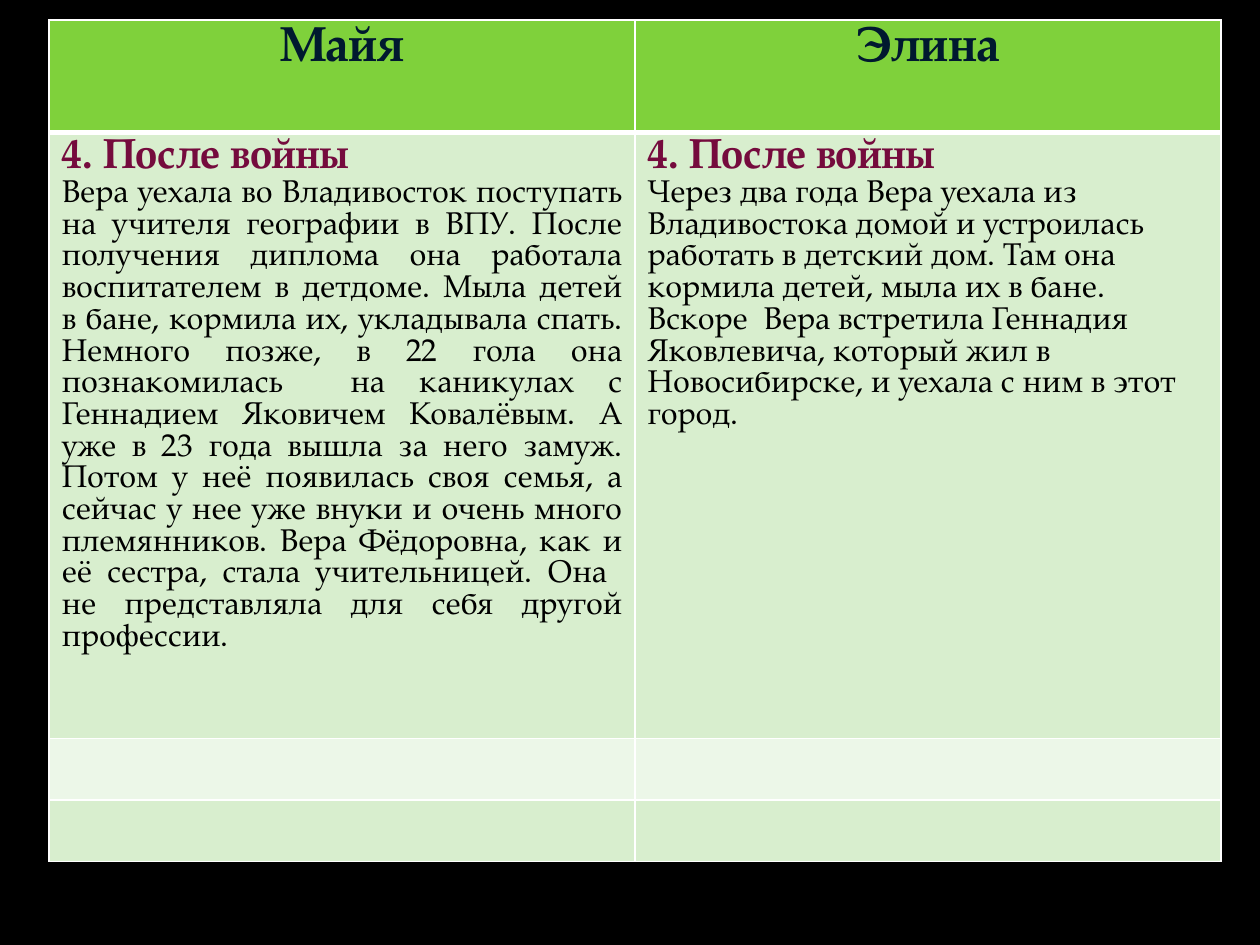
from lxml.etree import SubElement
from pptx import Presentation
from pptx.dml.color import RGBColor
from pptx.enum.text import PP_ALIGN
from pptx.oxml.ns import qn
from pptx.util import Inches, Pt

BLACK = RGBColor(0x00, 0x00, 0x00)
WHITE = RGBColor(0xFF, 0xFF, 0xFF)
NAVY = RGBColor(0x00, 0x19, 0x2F)
WINE = RGBColor(0x75, 0x0B, 0x3D)
GREEN = RGBColor(0x7F, 0xD1, 0x3B)
LIGHT_GREEN = RGBColor(0xD8, 0xEE, 0xCE)
PALE_GREEN = RGBColor(0xEC, 0xF7, 0xE8)
FONT = "TeX Gyre Pagella"

ROW_HEIGHTS = (0.89, 4.81, 0.49, 0.49)
ROW_FILLS = (GREEN, LIGHT_GREEN, PALE_GREEN, LIGHT_GREEN)
HEADING = "4. После войны"
STORIES = (
    ("Майя", PP_ALIGN.JUSTIFY, (
        "Вера уехала во Владивосток поступать на учителя географии в ВПУ. "
        "После получения диплома она работала воспитателем в детдоме. "
        "Мыла детей в бане, кормила их, укладывала спать. ",
        "Немного позже, в 22 гола она познакомилась  на каникулах с "
        "Геннадием Яковичем Ковалёвым. А уже в 23 года вышла за него замуж. "
        "Потом у неё появилась своя семья, а сейчас у нее уже внуки и очень "
        "много племянников. Вера Фёдоровна, как и её сестра, стала "
        "учительницей. Она  не представляла для себя другой профессии.",
    )),
    ("Элина", PP_ALIGN.LEFT, (
        "Через два года Вера уехала из Владивостока домой и устроилась "
        "работать в детский дом. Там она кормила детей, мыла их в бане. "
        "Вскоре  Вера встретила Геннадия Яковлевича, который жил в "
        "Новосибирске, и уехала с ним в этот город.",
    )),
)


def format_paragraph(paragraph, text, size, color, bold, alignment):
    """Write one paragraph in the slide's font."""
    paragraph.text = text
    paragraph.alignment = alignment
    paragraph.font.name = FONT
    paragraph.font.size = Pt(size)
    paragraph.font.bold = bold
    paragraph.font.color.rgb = color


def style_cell(cell, fill, top_width, bottom_width):
    """Fill a cell and draw its white borders."""
    properties = cell._tc.get_or_add_tcPr()
    widths = {"a:lnL": 1, "a:lnR": 1, "a:lnT": top_width, "a:lnB": bottom_width}
    for side, width in widths.items():
        border = SubElement(properties, qn(side), w=str(Pt(width)))
        line_fill = SubElement(border, qn("a:solidFill"))
        SubElement(line_fill, qn("a:srgbClr"), val=str(WHITE))
    cell.fill.solid()
    cell.fill.fore_color.rgb = fill


def fill_story(cell, alignment, passages):
    """Write the heading and the passages of one story."""
    frame = cell.text_frame
    format_paragraph(frame.paragraphs[0], HEADING, 24, WINE, True, alignment)
    for passage in passages:
        format_paragraph(frame.add_paragraph(), passage, 18, BLACK, False, alignment)


def add_story_table(slide, left, top, width):
    """Place the table that sets the two stories side by side."""
    table = slide.shapes.add_table(
        len(ROW_HEIGHTS), len(STORIES), left, top, width, Inches(sum(ROW_HEIGHTS))
    ).table
    for index, (height, fill) in enumerate(zip(ROW_HEIGHTS, ROW_FILLS)):
        table.rows[index].height = Inches(height)
        for cell in table.rows[index].cells:
            style_cell(cell, fill, 3 if index == 1 else 1, 3 if index == 0 else 1)
    for column, (name, alignment, passages) in enumerate(STORIES):
        name_line = table.cell(0, column).text_frame.paragraphs[0]
        format_paragraph(name_line, name, 28, NAVY, True, PP_ALIGN.CENTER)
        fill_story(table.cell(1, column), alignment, passages)


def main():
    """Build the slide and save it."""
    presentation = Presentation()
    presentation.slide_width = Inches(10)
    presentation.slide_height = Inches(7.5)
    slide = presentation.slides.add_slide(presentation.slide_layouts[6])
    slide.background.fill.solid()
    slide.background.fill.fore_color.rgb = BLACK
    add_story_table(slide, Inches(0.39), Inches(0.16), Inches(9.3))
    presentation.save("out.pptx")


if __name__ == "__main__":
    main()
